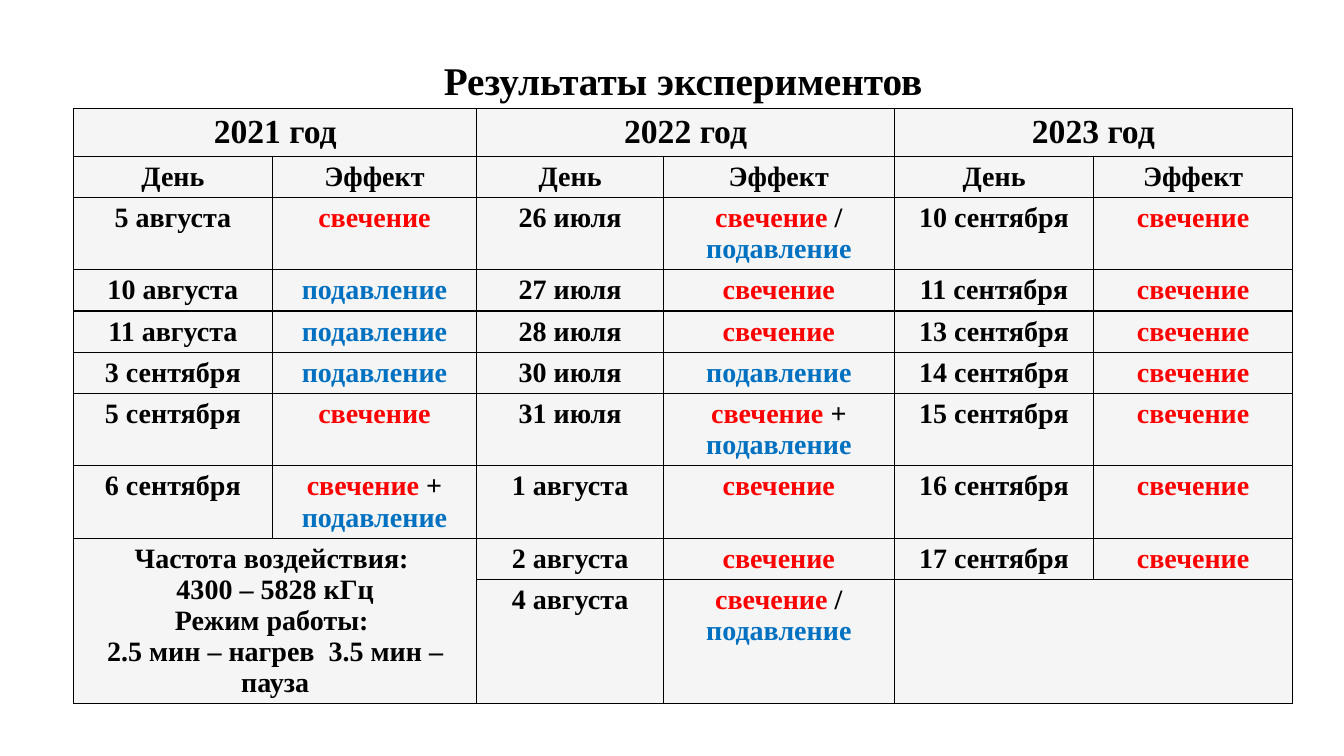
from lxml import etree
from pptx import Presentation
from pptx.dml.color import RGBColor
from pptx.enum.text import MSO_ANCHOR as Anchor, PP_ALIGN as Align
from pptx.oxml.ns import qn
from pptx.util import Inches, Pt

BLACK, RED, BLUE, GREY = "000000", "FF0000", "0070C0", "A5A5A5"
GLOW, DAMP = "свечение", "подавление"
EFFECT_COLORS = {GLOW: RED, DAMP: BLUE}
EITHER = [GLOW, " / ", DAMP]
BOTH = [GLOW, " + ", DAMP]

YEARS = ["2021 год", "2022 год", "2023 год"]
HEADS = ["День", "Эффект"]
RESULTS = [
    [("5 августа", [GLOW]), ("10 августа", [DAMP]), ("11 августа", [DAMP]),
     ("3 сентября", [DAMP]), ("5 сентября", [GLOW]), ("6 сентября", BOTH)],
    [("26 июля", EITHER), ("27 июля", [GLOW]), ("28 июля", [GLOW]),
     ("30 июля", [DAMP]), ("31 июля", BOTH), ("1 августа", [GLOW]),
     ("2 августа", [GLOW]), ("4 августа", EITHER)],
    [(f"{day} сентября", [GLOW]) for day in (10, 11, 13, 14, 15, 16, 17)],
]
NOTE = ["Частота воздействия: ", "4300 – 5828 кГц", "Режим работы: ",
        "2.5 мин – нагрев  3.5 мин – пауза"]
COL_WIDTHS = [1.97, 2.03, 1.85, 2.29, 1.98, 1.97]
ROW_COUNT, ROW_HEIGHT = 10, 0.41


def rgb(value):
    return RGBColor.from_string(value)


def add_text(p, text, size=20, color=BLACK, bold=True, font="Times New Roman"):
    p.alignment = Align.CENTER
    r = p.add_run()
    r.text = text
    r.font.size, r.font.bold, r.font.name = Pt(size), bold, font
    r.font.color.rgb = rgb(color)


def style_cell(cell):
    # Thin black borders, then a grey fill at 10 % opacity
    tc_pr = cell._tc.get_or_add_tcPr()
    for side in ("lnL", "lnR", "lnT", "lnB"):
        line = etree.SubElement(tc_pr, qn(f"a:{side}"), w=str(Pt(1)))
        fill = etree.SubElement(line, qn("a:solidFill"))
        etree.SubElement(fill, qn("a:srgbClr"), val=BLACK)
    cell.fill.solid()
    cell.fill.fore_color.rgb = rgb(GREY)
    grey = tc_pr.find(qn("a:solidFill")).find(qn("a:srgbClr"))
    etree.SubElement(grey, qn("a:alpha"), val="10000")


def add_title(s, left, top, width, height):
    title = s.shapes.title
    title.left, title.top = Inches(left), Inches(top)
    title.width, title.height = Inches(width), Inches(height)
    tf = title.text_frame
    tf.word_wrap = True
    tf.vertical_anchor = Anchor.TOP
    add_text(tf.paragraphs[0], "Результаты экспериментов", size=28)


def add_results(s, left, top, width, height):
    frame = s.shapes.add_table(ROW_COUNT, len(COL_WIDTHS), Inches(left),
                               Inches(top), Inches(width), Inches(height))
    table = frame.table
    table.first_row = table.horz_banding = False
    for column, col_width in zip(table.columns, COL_WIDTHS):
        column.width = Inches(col_width)
    for row in table.rows:
        row.height = Inches(ROW_HEIGHT)
    frame.height = Inches(height)
    for cell in table.iter_cells():
        style_cell(cell)

    # One pair of columns per year
    for i, (year, results) in enumerate(zip(YEARS, RESULTS)):
        col = 2 * i
        table.cell(0, col).merge(table.cell(0, col + 1))
        add_text(table.cell(0, col).text_frame.paragraphs[0], year, size=24)
        for j, head in enumerate(HEADS):
            add_text(table.cell(1, col + j).text_frame.paragraphs[0], head)
        for row, (day, effects) in enumerate(results, start=2):
            add_text(table.cell(row, col).text_frame.paragraphs[0], day)
            p = table.cell(row, col + 1).text_frame.paragraphs[0]
            for part in effects:
                add_text(p, part, color=EFFECT_COLORS.get(part, BLACK))

    # Conditions of the experiment and the empty corner
    note = table.cell(8, 0)
    note.merge(table.cell(9, 1))
    tf = note.text_frame
    for i, text in enumerate(NOTE):
        add_text(tf.add_paragraph() if i else tf.paragraphs[0], text)
    table.cell(9, 4).merge(table.cell(9, 5))


def main():
    prs = Presentation()
    prs.slide_width, prs.slide_height = Inches(13.33), Inches(7.5)
    s = prs.slides.add_slide(prs.slide_layouts[5])
    add_results(s, 0.73, 1.08, 12.09, 6.3)
    add_title(s, 3.88, 0.51, 5.79, 0.57)
    prs.save("out.pptx")


if __name__ == "__main__":
    main()
